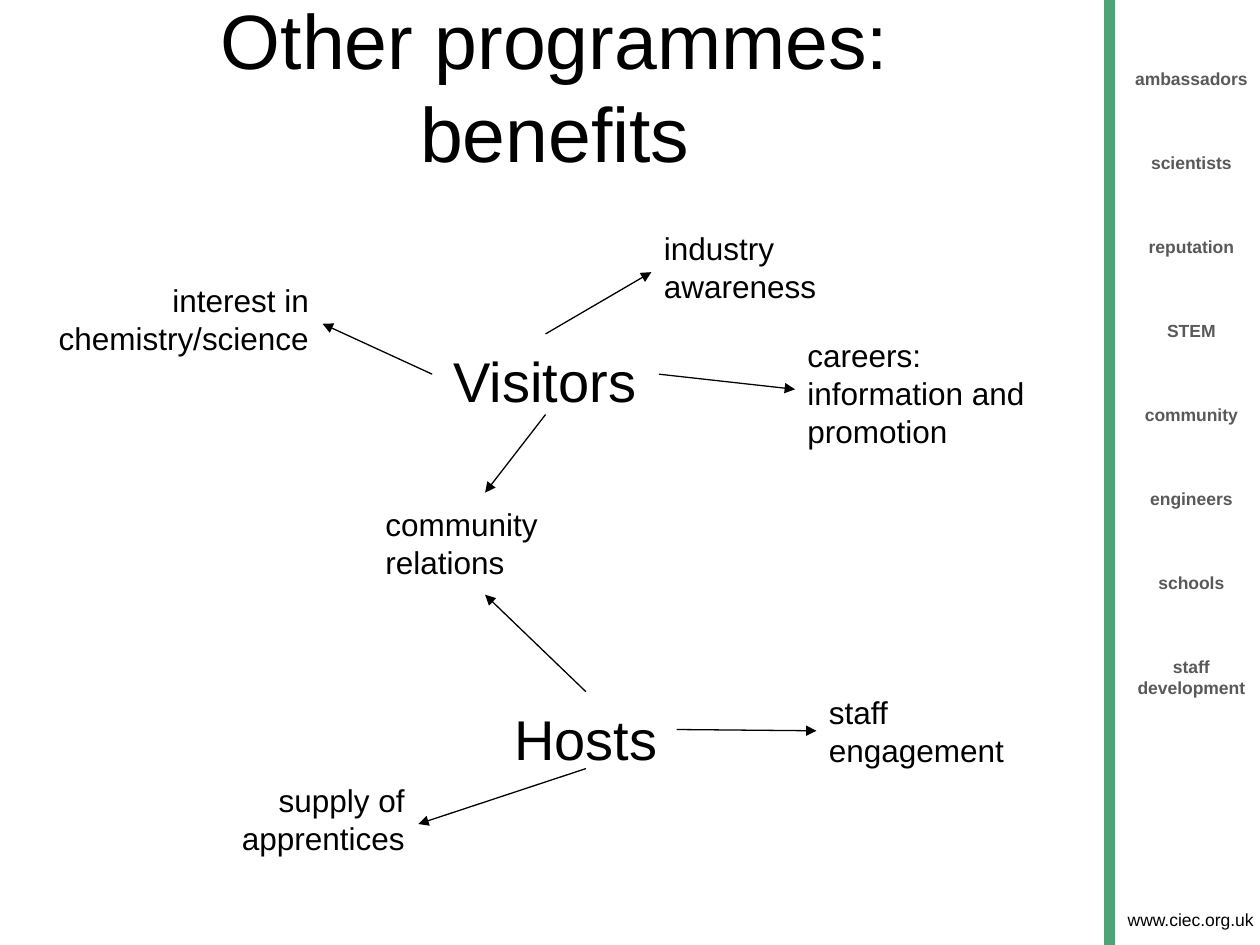
"""Build the slide on the benefits of other programmes for visitors and hosts."""
import lxml.etree
import pptx
import pptx.dml.color
import pptx.enum.shapes
import pptx.enum.text
import pptx.oxml.ns
import pptx.util

Inches = pptx.util.Inches
Pt = pptx.util.Pt
qn = pptx.oxml.ns.qn
ALIGN = pptx.enum.text.PP_ALIGN
ANCHOR = pptx.enum.text.MSO_ANCHOR


def colour(hex_string):
    return pptx.dml.color.RGBColor.from_string(hex_string)


def write(box, text, size, align, margin=0.1, hex_string="000000", bold=False, gap=0):
    frame = box.text_frame
    frame.word_wrap = True
    frame.auto_size = pptx.enum.text.MSO_AUTO_SIZE.NONE
    frame.margin_left = frame.margin_right = Inches(0.1)
    frame.margin_top = frame.margin_bottom = Inches(margin)
    frame.text = text
    for index, paragraph in enumerate(frame.paragraphs):
        paragraph.alignment = align
        paragraph.space_before = Pt(gap if index else 0)
        for run in paragraph.runs:
            run.font.name = "Arial"
            run.font.size = Pt(size)
            run.font.bold = bold
            run.font.color.rgb = colour(hex_string)


deck = pptx.Presentation()
deck.slide_width = Inches(10)
deck.slide_height = Inches(7.5)
slide = deck.slides.add_slide(deck.slide_layouts[5])
shapes = slide.shapes

divider = shapes.add_shape(
    pptx.enum.shapes.MSO_SHAPE.RECTANGLE,
    Inches(8.78), Inches(0), Inches(0.06), Inches(7.5))
divider.shadow.inherit = False
divider.fill.solid()
divider.fill.fore_color.rgb = colour("4EA477")
divider.line.color.rgb = colour("4EA477")
divider.line.width = Pt(2)

website = shapes.add_textbox(Inches(8.7), Inches(7.16), Inches(1.5), Inches(0.27))
write(website, "www.ciec.org.uk", 10, ALIGN.CENTER, margin=0.05)
website.text_frame.vertical_anchor = ANCHOR.MIDDLE

themes = ["ambassadors", "scientists", "reputation", "STEM", "community",
          "engineers", "schools", "staff development"]
sidebar = shapes.add_textbox(Inches(8.85), Inches(0.49), Inches(1.21), Inches(6.66))
write(sidebar, "\n".join(themes), 10, ALIGN.CENTER, margin=0.05,
      hex_string="595959", bold=True, gap=36)

title = shapes.title
title.left, title.top = Inches(0.5), Inches(0.05)
title.width, title.height = Inches(7.81), Inches(1.25)
write(title, "Other programmes:\nbenefits", 44, ALIGN.CENTER, margin=0.05)
title.text_frame.vertical_anchor = ANCHOR.MIDDLE

labels = [
    ("Visitors", 32, ALIGN.CENTER, 3.43, 2.65, 1.79, 0.63),
    ("interest in chemistry/science", 18, ALIGN.RIGHT, 0.13, 2.13, 2.42, 0.87),
    ("community relations", 18, ALIGN.LEFT, 2.96, 3.91, 1.79, 0.81),
    ("careers: information and promotion", 18, ALIGN.LEFT, 6.31, 2.57, 2.25, 1.05),
    ("industry awareness", 18, ALIGN.LEFT, 5.17, 1.72, 1.63, 0.87),
    ("Hosts", 32, ALIGN.CENTER, 3.93, 5.49, 1.44, 0.61),
    ("supply of apprentices", 18, ALIGN.RIGHT, 1.52, 6.1, 1.79, 0.87),
    ("staff engagement", 18, ALIGN.LEFT, 6.48, 5.4, 1.79, 0.81),
]
for text, size, align, *place in labels:
    label = shapes.add_textbox(*map(Inches, place))
    write(label, text, size, align)

arrows = [
    (3.43, 2.97, 2.56, 2.57),
    (4.33, 3.29, 3.85, 3.91),
    (5.23, 2.97, 6.31, 3.09),
    (4.33, 2.65, 5.17, 2.16),
    (4.65, 6.1, 3.32, 6.54),
    (5.37, 5.79, 6.48, 5.8),
    (4.65, 5.49, 3.85, 4.72),
]
for ends in arrows:
    arrow = shapes.add_connector(
        pptx.enum.shapes.MSO_CONNECTOR.STRAIGHT, *map(Inches, ends))
    arrow.line.color.rgb = colour("000000")
    arrow.line.width = Pt(0.75)
    lxml.etree.SubElement(arrow.line._get_or_add_ln(), qn("a:tailEnd"), type="triangle")
    lxml.etree.SubElement(arrow._element.spPr, qn("a:effectLst"))

deck.save("out.pptx")
